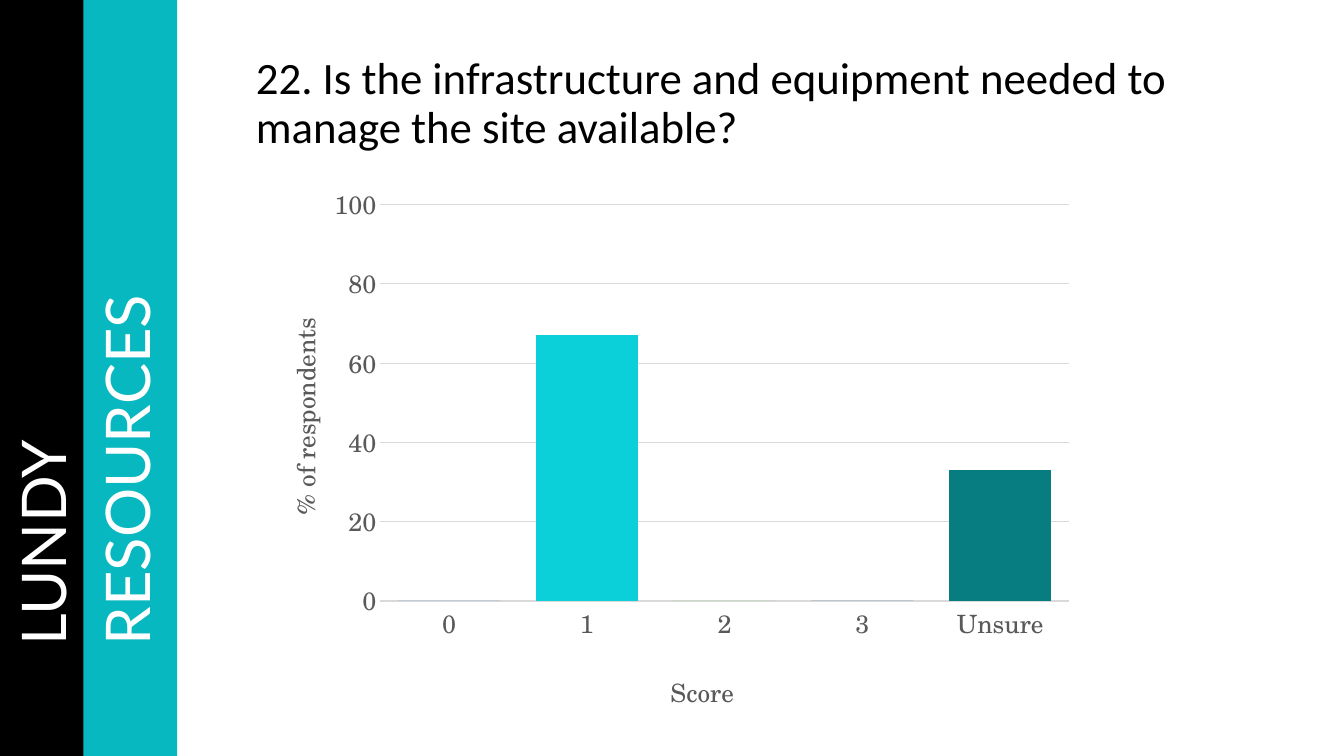
from dataclasses import dataclass

from lxml.etree import SubElement
from pptx import Presentation
from pptx.chart.data import CategoryChartData
from pptx.dml.color import RGBColor
from pptx.enum.chart import XL_CHART_TYPE, XL_TICK_MARK
from pptx.enum.shapes import MSO_SHAPE
from pptx.enum.text import MSO_ANCHOR, PP_ALIGN
from pptx.oxml.ns import qn
from pptx.util import Pt


@dataclass(frozen=True)
class Theme:
    black: RGBColor = RGBColor.from_string("000000")
    white: RGBColor = RGBColor.from_string("FFFFFF")
    teal: RGBColor = RGBColor.from_string("08B8C0")
    axis_text: RGBColor = RGBColor.from_string("595959")
    grid: RGBColor = RGBColor.from_string("D9D9D9")
    bars: tuple = ("0F6FC6", "0BD0D9", "7CCA62", "094377", "077D82")
    title_font: str = "Calibri"
    chart_font: str = "TeX Gyre Schola"
    band_font: str = "Lato"
    title_size: Pt = Pt(32)
    chart_size: Pt = Pt(18)
    band_size: Pt = Pt(44)


def set_font(font, name, size, color):
    font.name, font.size, font.bold = name, size, False
    font.color.rgb = color


def place(element, **fractions):
    """Fix the layout of a chart part, in fractions of the chart's size."""
    layout = element.find(qn("c:layout"))
    if layout is None:
        layout = SubElement(element, qn("c:layout"))
        before = element.find(qn("c:tx"))
        if before is not None:
            before.addnext(layout)
        else:
            element.insert(0, layout)
    manual = SubElement(layout, qn("c:manualLayout"))
    if "w" in fractions:
        SubElement(manual, qn("c:layoutTarget")).set("val", "inner")
    for mode in ("xMode", "yMode"):
        SubElement(manual, qn(f"c:{mode}")).set("val", "edge")
    for name, fraction in fractions.items():
        SubElement(manual, qn(f"c:{name}")).set("val", str(fraction))


theme = Theme()
presentation = Presentation()
presentation.slide_width, presentation.slide_height = Pt(960), Pt(540)
slide = presentation.slides.add_slide(presentation.slide_layouts[6])

# Question
title = slide.shapes.add_textbox(Pt(175.7), Pt(22.3), Pt(699), Pt(104.4))
title.text_frame.word_wrap = True
title.text_frame.vertical_anchor = MSO_ANCHOR.MIDDLE
paragraph = title.text_frame.paragraphs[0]
paragraph.text = "22. Is the infrastructure and equipment needed to manage the site available?"
paragraph.line_spacing = 0.9
set_font(paragraph.font, theme.title_font, theme.title_size, theme.black)

# Chart of answers
chart_data = CategoryChartData()
chart_data.categories = ["0", "1", "2", "3", "Unsure"]
chart_data.add_series("Series 1", (0, 67, 0, 0, 33))
chart = slide.shapes.add_chart(
    XL_CHART_TYPE.COLUMN_CLUSTERED, Pt(175.7), Pt(126.7), Pt(600), Pt(388), chart_data
).chart
chart.has_legend = False
chart.has_title = False
set_font(chart.font, theme.chart_font, theme.chart_size, theme.axis_text)
place(chart.plots[0]._element.getparent(), x=0.16, y=0.05, w=0.82, h=0.73)

plot = chart.plots[0]
plot.gap_width, plot.overlap, plot.vary_by_categories = 35, -2, False
for index, color in enumerate(theme.bars):
    fill = plot.series[0].points[index].format.fill
    fill.solid()
    fill.fore_color.rgb = RGBColor.from_string(color)

score_axis, percent_axis = chart.category_axis, chart.value_axis
for axis, text, x, y in (
    (score_axis, "Score", 0.5, 0.9),
    (percent_axis, "% of respondents", 0.04, 0.25),
):
    axis.major_tick_mark = axis.minor_tick_mark = XL_TICK_MARK.NONE
    set_font(axis.tick_labels.font, theme.chart_font, theme.chart_size, theme.axis_text)
    axis_title = axis.axis_title
    axis_title.text_frame.text = text
    set_font(axis_title.text_frame.paragraphs[0].font,
             theme.chart_font, theme.chart_size, theme.axis_text)
    place(axis_title._element, x=x, y=y)

percent_axis.axis_title.text_frame._txBody.bodyPr.set("rot", "-5400000")
percent_axis.minimum_scale, percent_axis.maximum_scale = 0, 100
percent_axis.major_unit = 20
percent_axis.format.line.fill.background()
for line in (score_axis.format.line, percent_axis.major_gridlines.format.line):
    line.color.rgb = theme.grid
    line.width = Pt(0.75)

# Side bands, turned to read upwards
band_length, band_width = 540, 67
for text, color, center in (("LUNDY", theme.black, 33), ("RESOURCES", theme.teal, 93)):
    band = slide.shapes.add_shape(
        MSO_SHAPE.RECTANGLE, Pt(center - band_length / 2), Pt((540 - band_width) / 2),
        Pt(band_length), Pt(band_width))
    band.rotation = 270
    band.shadow.inherit = False
    band.fill.solid()
    band.fill.fore_color.rgb = color
    band.line.fill.background()
    band.text_frame.margin_left = Pt(79)
    band.text_frame.vertical_anchor = MSO_ANCHOR.MIDDLE
    paragraph = band.text_frame.paragraphs[0]
    paragraph.text = text
    paragraph.alignment = PP_ALIGN.LEFT
    paragraph.line_spacing = 0.9
    set_font(paragraph.font, theme.band_font, theme.band_size, theme.white)

presentation.save("out.pptx")
